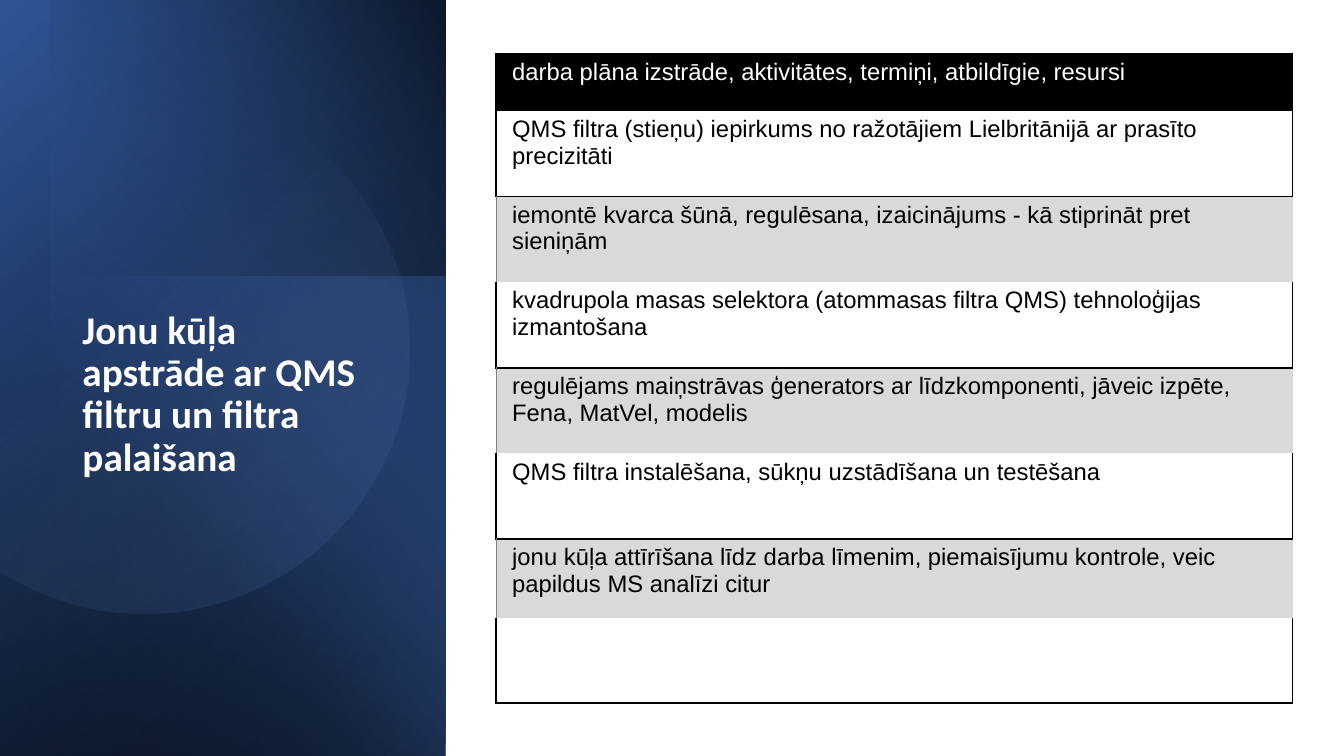
from dataclasses import dataclass
from math import acos, cos, degrees, radians, sin

from lxml import etree
from pptx import Presentation
from pptx.dml.color import RGBColor
from pptx.enum.shapes import MSO_SHAPE
from pptx.oxml.ns import qn
from pptx.util import Inches, Pt

RECTANGLE = MSO_SHAPE.RECTANGLE
SLIDE_W, SLIDE_H = Inches(13.33), Inches(7.5)


@dataclass(frozen=True)
class Theme:
    black: str = "000000"
    white: str = "FFFFFF"
    band: str = "D9D9D9"
    hairline: str = "808080"
    blue: str = "4472C4"
    deep_blue: str = "2F5597"
    navy: str = "203864"
    pale_blue: str = "8FAADC"
    title_font: str = "Calibri"
    body_font: str = "Arial"
    title_size: float = 28
    body_size: float = 17
    thick: float = 1.47
    thin: float = 0.5


THEME = Theme()


@dataclass(frozen=True)
class Stop:
    percent: float
    color: str
    opacity: int = 100


@dataclass(frozen=True)
class Gradient:
    start: Stop
    end: Stop
    angle: float


@dataclass(frozen=True)
class Layer:
    """A quarter-turned rectangle; its visible box is in percent of the slide."""
    left: float
    top: float
    width: float
    height: float
    turn: int
    mirrored: bool
    gradient: Gradient


@dataclass(frozen=True)
class RowStyle:
    fill: str
    ink: str
    borders: dict[str, tuple[str, float]]


@dataclass(frozen=True)
class Step:
    text: str
    style: RowStyle
    height: float = 11.33


LAYERS = [
    Layer(0, 0, 33.16, 100.27, 90, True,
          Gradient(Stop(0, THEME.black), Stop(100, THEME.deep_blue), 320)),
    Layer(0, 36.53, 33.16, 63.47, 270, False,
          Gradient(Stop(0, THEME.blue, 50), Stop(100, THEME.navy, 0), 100)),
    Layer(3.75, 0, 29.41, 100, 270, True,
          Gradient(Stop(31, THEME.blue, 0), Stop(100, THEME.black, 59), 230)),
]
DISC_GRADIENT = Gradient(Stop(39, THEME.pale_blue, 0), Stop(100, THEME.deep_blue, 26), 52)
DISC_TURN = 101.6

EDGE = (THEME.black, THEME.thick)
HEADER = RowStyle(THEME.black, THEME.white, {"L": EDGE, "T": EDGE})
PLAIN = RowStyle(THEME.white, THEME.black, {"L": EDGE, "R": EDGE, "B": EDGE})
BAND = RowStyle(THEME.band, THEME.black, {"L": (THEME.hairline, THEME.thin), "T": EDGE})

TITLE = "Jonu kūļa apstrāde ar QMS filtru un filtra palaišana"
STEPS = [
    Step("darba plāna izstrāde, aktivitātes, termiņi, atbildīgie, resursi", HEADER, 7.6),
    Step("QMS filtra (stieņu) iepirkums no ražotājiem Lielbritānijā ar prasīto precizitāti", PLAIN),
    Step("iemontē kvarca šūnā, regulēsana, izaicinājums - kā stiprināt pret sieniņām", BAND),
    Step("kvadrupola masas selektora (atommasas filtra QMS) tehnoloģijas izmantošana", PLAIN),
    Step("regulējams maiņstrāvas ģenerators ar līdzkomponenti, jāveic izpēte, "
         "Fena, MatVel, modelis", BAND),
    Step("QMS filtra instalēšana, sūkņu uzstādīšana un testēšana", PLAIN),
    Step("jonu kūļa attīrīšana līdz darba līmenim, piemaisījumu kontrole, "
         "veic papildus MS analīzi citur", BAND, 10.4),
    Step("", PLAIN),
]


def across(percent: float) -> int:
    return round(SLIDE_W * percent / 100)


def down(percent: float) -> int:
    return round(SLIDE_H * percent / 100)


def rgb(color: str) -> RGBColor:
    return RGBColor.from_string(color)


def paint(shape, gradient: Gradient) -> None:
    """Give a shape a two-stop gradient with opacity, no line and no shadow."""
    shape.shadow.inherit = False
    shape.line.fill.background()
    shape.fill.gradient()
    shape.fill.gradient_angle = gradient.angle
    stops = (gradient.start, gradient.end)
    for target, stop in zip(shape.fill.gradient_stops, stops):
        target.position = stop.percent / 100
        target.color.rgb = rgb(stop.color)
    for color, stop in zip(shape._element.spPr.iter(qn("a:srgbClr")), stops):
        if stop.opacity < 100:
            etree.SubElement(color, qn("a:alpha"), val=str(stop.opacity * 1000))


def add_layer(slide, layer: Layer) -> None:
    seen_w, seen_h = across(layer.width), down(layer.height)
    left = across(layer.left) + (seen_w - seen_h) // 2
    top = down(layer.top) + (seen_h - seen_w) // 2
    rectangle = slide.shapes.add_shape(RECTANGLE, left, top, seen_h, seen_w)
    rectangle.rotation = layer.turn
    if layer.mirrored:
        rectangle._element.spPr.find(qn("a:xfrm")).set("flipH", "1")
    paint(rectangle, layer.gradient)


def add_disc(slide) -> None:
    """Draw the circle whose left side is cut off by the slide edge."""
    center_x, center_y = across(13.58), down(52.4)
    radius, edge_distance = down(35.07), across(10.73)
    half_arc = degrees(acos(-edge_distance / radius))
    segments = 120
    angles = [radians(-half_arc - DISC_TURN + 2 * half_arc * i / segments)
              for i in range(segments + 1)]
    points = [(round(center_x + radius * cos(a)), round(center_y + radius * sin(a)))
              for a in angles]
    outline = slide.shapes.build_freeform(*points[0])
    outline.add_line_segments(points[1:], close=True)
    disc = outline.convert_to_shape()
    disc.rotation = DISC_TURN
    paint(disc, DISC_GRADIENT)


def add_run(paragraph, text: str, font: str, size: float, color: str, bold: bool = False) -> None:
    run = paragraph.add_run()
    run.text = text
    run.font.name = font
    run.font.size = Pt(size)
    run.font.bold = bold
    run.font.color.rgb = rgb(color)


def add_title(slide) -> None:
    box = slide.shapes.add_textbox(across(5.4), down(40.4), across(23.63), down(44.8))
    box.text_frame.word_wrap = True
    paragraph = box.text_frame.paragraphs[0]
    paragraph.line_spacing = 0.9
    add_run(paragraph, TITLE, THEME.title_font, THEME.title_size, THEME.white, bold=True)


def set_borders(cell, borders: dict[str, tuple[str, float]]) -> None:
    properties = cell._tc.get_or_add_tcPr()
    for side in "LRTB":
        line = etree.SubElement(properties, qn(f"a:ln{side}"))
        if side in borders:
            color, width = borders[side]
            line.set("w", str(Pt(width)))
            solid = etree.SubElement(line, qn("a:solidFill"))
            etree.SubElement(solid, qn("a:srgbClr"), val=color)
        else:
            etree.SubElement(line, qn("a:noFill"))


def add_steps(slide) -> None:
    height = down(sum(step.height for step in STEPS))
    table = slide.shapes.add_table(len(STEPS), 1, across(36.91), down(7.07),
                                   across(59.26), height).table
    table.first_row = table.horz_banding = False
    for index, step in enumerate(STEPS):
        table.rows[index].height = down(step.height)
        cell = table.cell(index, 0)
        cell.margin_left, cell.margin_right = across(1.2), across(0.83)
        cell.margin_top = cell.margin_bottom = down(0.67)
        set_borders(cell, step.style.borders)
        cell.fill.solid()
        cell.fill.fore_color.rgb = rgb(step.style.fill)
        if step.text:
            add_run(cell.text_frame.paragraphs[0], step.text, THEME.body_font,
                    THEME.body_size, step.style.ink)


def main() -> None:
    deck = Presentation()
    deck.slide_width, deck.slide_height = SLIDE_W, SLIDE_H
    slide = deck.slides.add_slide(deck.slide_layouts[6])
    for layer in LAYERS:
        add_layer(slide, layer)
    add_disc(slide)
    add_title(slide)
    add_steps(slide)
    deck.save("out.pptx")


if __name__ == "__main__":
    main()
